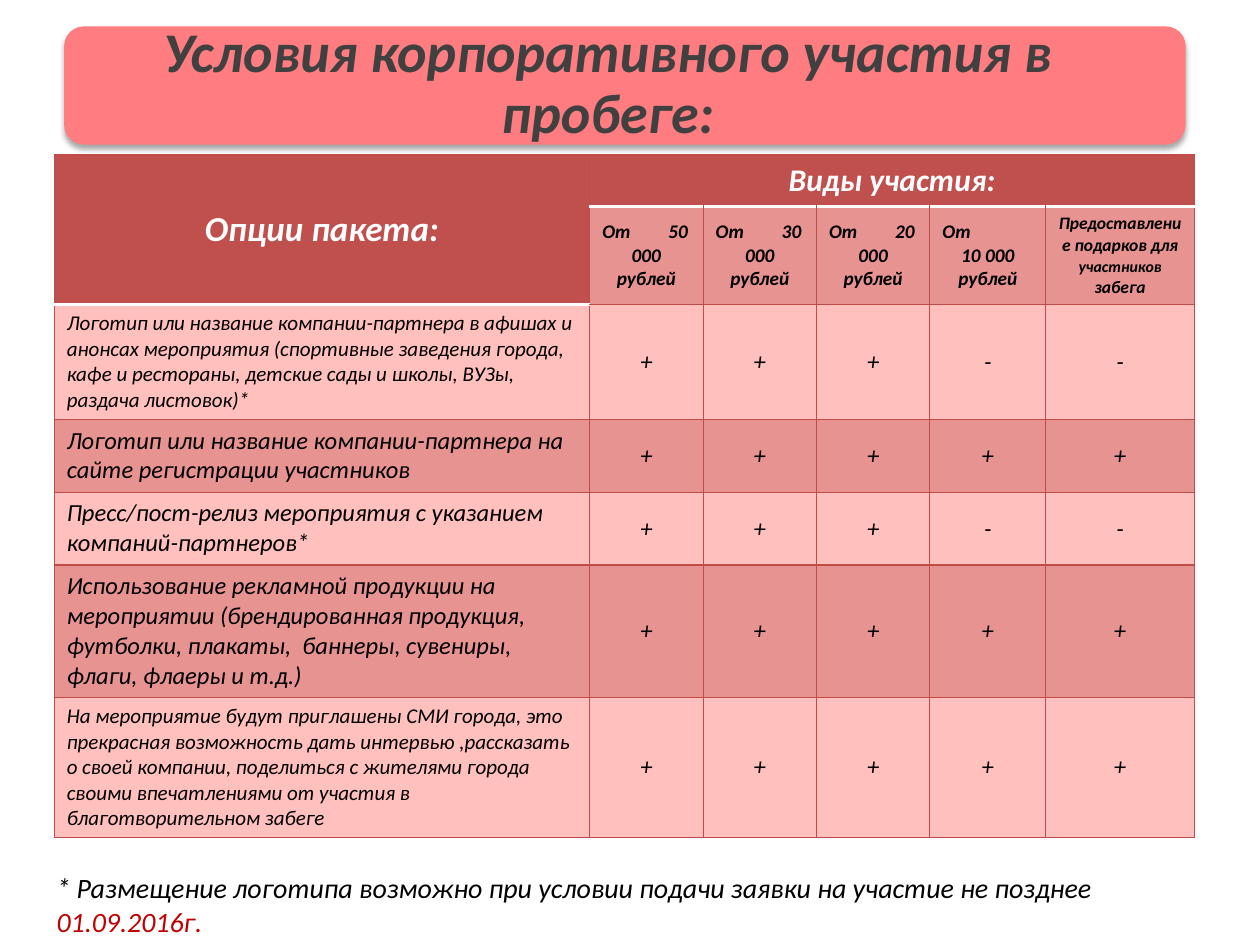
from itertools import product

from lxml import etree
from pptx import Presentation
from pptx.dml.color import RGBColor
from pptx.enum.shapes import MSO_SHAPE
from pptx.enum.text import MSO_ANCHOR, PP_ALIGN
from pptx.oxml import parse_xml
from pptx.oxml.ns import qn
from pptx.util import Inches, Pt

NS = 'xmlns:a="http://schemas.openxmlformats.org/drawingml/2006/main"'
ROUNDED = MSO_SHAPE.ROUNDED_RECTANGLE
MIDDLE, TOP = MSO_ANCHOR.MIDDLE, MSO_ANCHOR.TOP
LEFT, CENTER = PP_ALIGN.LEFT, PP_ALIGN.CENTER

PINK, HEADER, LIGHT, DARK = "FF7C80", "C0504D", "FFC0BE", "E69391"
GRID, WHITE, BLACK, RED, GRAY = "BF4C48", "FFFFFF", "000000", "C00000", "404040"

COLUMNS = [42.5, 9, 9, 9, 9.2, 11.8]
ROWS = [5.5, 10.3, 12.2, 7.7, 7.7, 14, 14.8]
PRICES = [("От\t50", "000 рублей"), ("От\t30", "000 рублей"),
          ("От\t20", "000 рублей"), ("От", "10 000 рублей")]
OPTIONS = [
    ("Логотип или название компании-партнера в афишах и анонсах мероприятия "
     "(спортивные заведения города, кафе и рестораны, детские сады и школы, "
     "ВУЗы, раздача листовок)*", 12, "+++--"),
    ("Логотип или название компании-партнера на сайте регистрации участников",
     14, "+++++"),
    ("Пресс/пост-релиз мероприятия с указанием компаний-партнеров*", 14, "+++--"),
    ("Использование рекламной продукции на мероприятии (брендированная "
     "продукция, футболки, плакаты,  баннеры, сувениры, флаги, флаеры и т.д.)",
     14, "+++++"),
    ("На мероприятие будут приглашены СМИ города, это прекрасная возможность "
     "дать интервью ,рассказать о своей компании, поделиться с жителями города "
     "своими впечатлениями от участия в благотворительном забеге", 12, "+++++"),
]


def rgb(value):
    return RGBColor.from_string(value)


def add_run(p, text, size=14, color=BLACK, bold=False):
    r = p.add_run()
    r.text = text
    f = r.font
    f.name, f.size, f.bold, f.italic = "Calibri", Pt(size), bold, True
    f.color.rgb = rgb(color)


def add_right_tab(p, inches):
    tabs = etree.SubElement(p._p.get_or_add_pPr(), qn("a:tabLst"))
    etree.SubElement(tabs, qn("a:tab"), pos=str(Inches(inches)), algn="r")


def set_border(cell, side, color=GRID, width=0.75):
    """Draw one side of a cell: L, R, T or B; must precede the cell's fill."""
    tc_pr = cell._tc.get_or_add_tcPr()
    tc_pr.append(parse_xml(
        f'<a:ln{side} {NS} w="{Pt(width)}"><a:solidFill>'
        f'<a:srgbClr val="{color}"/></a:solidFill></a:ln{side}>'))


class Deck:
    """Holds the slide; all lengths are percentages of its width and height."""

    def __init__(self):
        self.prs = Presentation()
        self.prs.slide_width, self.prs.slide_height = Inches(10), Inches(7.5)
        self.s = self.prs.slides.add_slide(self.prs.slide_layouts[6])

    def x(self, share):
        return int(self.prs.slide_width * share / 100)

    def y(self, share):
        return int(self.prs.slide_height * share / 100)

    def box(self, left, top, width, height):
        return self.x(left), self.y(top), self.x(width), self.y(height)

    def panel(self, *place):
        sp = self.s.shapes.add_shape(ROUNDED, *self.box(*place))
        sp.fill.solid()
        sp.fill.fore_color.rgb = rgb(PINK)
        sp.line.fill.background()
        sp._element.spPr.append(parse_xml(
            f'<a:effectLst {NS}><a:outerShdw blurRad="{Pt(3.1)}" '
            f'dist="{Pt(1.8)}" dir="5400000" rotWithShape="0">'
            '<a:srgbClr val="000000"><a:alpha val="35000"/></a:srgbClr>'
            '</a:outerShdw></a:effectLst>'))

    def text(self, *place, anchor=TOP, align=LEFT, inset=(0.1, 0.05)):
        """Add a text box and return its first paragraph."""
        tf = self.s.shapes.add_textbox(*self.box(*place)).text_frame
        tf.word_wrap, tf.vertical_anchor = True, anchor
        tf.margin_left = tf.margin_right = Inches(inset[0])
        tf.margin_top = tf.margin_bottom = Inches(inset[1])
        p = tf.paragraphs[0]
        p.alignment = align
        return p

    def table(self, left, top):
        place = self.box(left, top, sum(COLUMNS), sum(ROWS))
        t = self.s.shapes.add_table(len(ROWS), len(COLUMNS), *place).table
        t.horz_banding = t.first_row = False
        for column, share in zip(t.columns, COLUMNS):
            column.width = self.x(share)
        for row, share in zip(t.rows, ROWS):
            row.height = self.y(share)
        for i, j in product(range(len(ROWS)), range(len(COLUMNS))):
            cell = t.cell(i, j)
            header_rows = 2 if j == 0 else 1
            for side in "LRTB":
                under_header = ((side == "B" and i == header_rows - 1)
                                or (side == "T" and i == header_rows))
                if under_header:
                    set_border(cell, side, WHITE, 2)
                else:
                    set_border(cell, side)
            cell.fill.solid()
            fill = HEADER if i < header_rows else DARK if i % 2 else LIGHT
            cell.fill.fore_color.rgb = rgb(fill)
        return t

    def cell(self, cell, *texts, anchor=MIDDLE, align=CENTER, **style):
        """Write one paragraph per text; a text with a tab spans the cell."""
        cell.vertical_anchor = anchor
        tf = cell.text_frame
        for n, text in enumerate(texts):
            p = tf.add_paragraph() if n else tf.paragraphs[0]
            spread = len(texts) > 1 and n == 0
            p.alignment = LEFT if spread else align
            if "\t" in text:
                add_right_tab(p, 0.68)
            add_run(p, text, **style)


def main():
    deck = Deck()
    deck.panel(5.1, 2.8, 89, 12.5)
    p = deck.text(6.5, 3.5, 83.5, 11, anchor=MIDDLE, align=CENTER, inset=(0.08, 0.04))
    p.line_spacing = 0.9
    add_run(p, "Условия корпоративного участия в пробеге:", size=32, color=GRAY, bold=True)

    t = deck.table(4.3, 16.4)
    t.cell(0, 0).merge(t.cell(1, 0))
    t.cell(0, 1).merge(t.cell(0, 5))
    deck.cell(t.cell(0, 0), "Опции пакета:", size=20, color=WHITE, bold=True)
    deck.cell(t.cell(0, 1), "Виды участия:", size=18, color=WHITE, bold=True)
    for j, price in enumerate(PRICES, 1):
        deck.cell(t.cell(1, j), *price, size=11, bold=True)
    gifts = t.cell(1, 5)
    deck.cell(gifts, "Предоставление подарков для ", size=10, bold=True)
    p = gifts.text_frame.paragraphs[0]
    add_run(p, "участников", size=9, bold=True)
    add_run(p, " забега", size=10, bold=True)
    for i, (option, size, marks) in enumerate(OPTIONS, 2):
        deck.cell(t.cell(i, 0), option, anchor=TOP, align=LEFT, size=size)
        for j, mark in enumerate(marks, 1):
            deck.cell(t.cell(i, j), mark)

    p = deck.text(3.5, 91.5, 88.2, 8.5)
    add_run(p, "* Размещение логотипа возможно при условии подачи заявки "
               "на участие не позднее ", size=16)
    add_run(p, "01.09.2016г.", size=16, color=RED)
    deck.prs.save("out.pptx")


if __name__ == "__main__":
    main()
